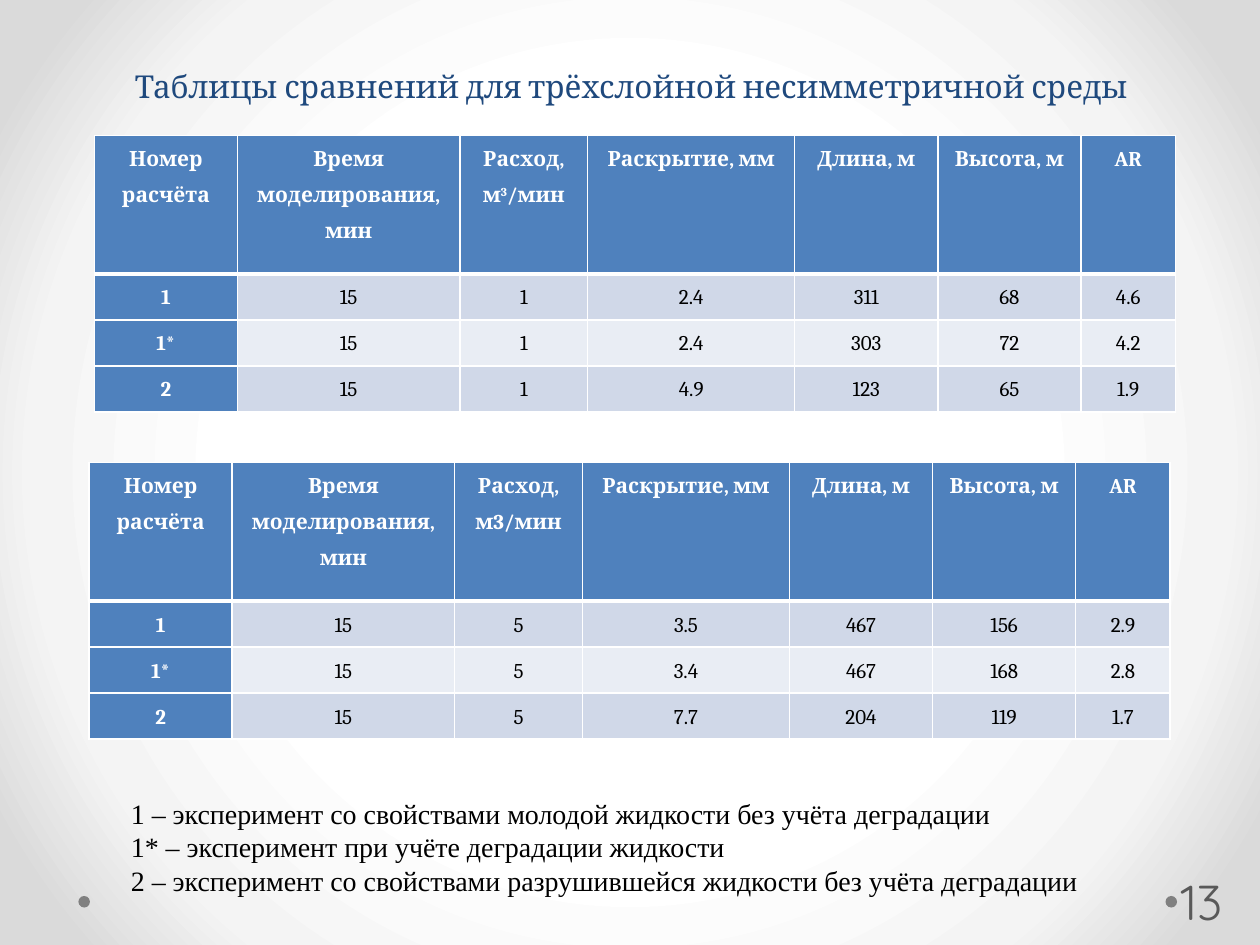
from dataclasses import dataclass

from lxml import etree
from pptx import Presentation
from pptx.dml.color import RGBColor
from pptx.enum import shapes, text
from pptx.oxml import ns, parse_xml
from pptx.util import Pt


@dataclass(frozen=True)
class Theme:
    title: str = "1F497D"
    accent: str = "4F81BD"
    bands: tuple = ("D0D8E8", "E9EDF4")
    white: str = "FFFFFF"
    black: str = "000000"
    dot: str = "808080"
    number: str = "595959"
    glow: tuple = ((50, "FFFFFF"), (76, "F4F4F4"), (92, "DADADA"))
    serif: str = "Cambria"
    note_font: str = "Times New Roman"
    number_font: str = "Quicksand"
    title_size: int = 18
    table_size: int = 12
    note_size: int = 16
    number_size: int = 28


T = Theme()
COLUMNS = (81.7, 127.1, 73.1, 118.3, 81.8, 81.8, 54)
HEADER_HEIGHT, ROW_HEIGHT = 79.2, 26.3

# A cell is a list of (text, is superscript) pairs, or a plain string.
FLOW_SUPERSCRIPT = [("Расход, м", False), ("3", True), ("/мин", False)]
FLOW_PLAIN = "Расход, м3/мин"
LOW_FLOW = [
    ("1", "15", "1", "2.4", "311", "68", "4.6"),
    ("1*", "15", "1", "2.4", "303", "72", "4.2"),
    ("2", "15", "1", "4.9", "123", "65", "1.9"),
]
HIGH_FLOW = [
    ("1", "15", "5", "3.5", "467", "156", "2.9"),
    ("1*", "15", "5", "3.4", "467", "168", "2.8"),
    ("2", "15", "5", "7.7", "204", "119", "1.7"),
]
NOTES = (
    "1 – эксперимент со свойствами молодой жидкости без учёта деградации",
    "1* – эксперимент при учёте деградации жидкости",
    "2 – эксперимент со свойствами разрушившейся жидкости без учёта деградации",
)


def header(flow):
    return ("Номер расчёта", "Время моделирования, мин", flow,
            "Раскрытие, мм", "Длина, м", "Высота, м", "AR")


def add_run(p, content, font, size, color, bold=False):
    r = p.add_run()
    r.text = content
    r.font.name = font
    r.font.size = Pt(size)
    r.font.bold = bold
    r.font.color.rgb = RGBColor.from_string(color)
    return r


def set_background(s):
    """Fill the slide with a radial gradient around its centre."""
    stops = "".join(
        f'<a:gs pos="{pos * 1000}"><a:srgbClr val="{color}"/></a:gs>'
        for pos, color in T.glow)
    bg = parse_xml(
        f'<p:bg {ns.nsdecls("p", "a")}><p:bgPr><a:gradFill rotWithShape="1">'
        f'<a:gsLst>{stops}</a:gsLst><a:path path="circle">'
        '<a:fillToRect l="50000" t="50000" r="50000" b="50000"/></a:path>'
        '</a:gradFill><a:effectLst/></p:bgPr></p:bg>')
    s.element.cSld.insert(0, bg)


def add_title(s, content):
    sp = s.shapes.title
    sp.left, sp.top, sp.width, sp.height = Pt(36.7), Pt(-13.7), Pt(648), Pt(77)
    tf = sp.text_frame
    tf.auto_size = text.MSO_AUTO_SIZE.NONE
    tf.vertical_anchor = text.MSO_ANCHOR.BOTTOM
    p = tf.paragraphs[0]
    p.alignment = text.PP_ALIGN.CENTER
    p.line_spacing = Pt(58)
    add_run(p, content, T.serif, T.title_size, T.title)


def add_dot(s, left):
    sp = s.shapes.add_shape(shapes.MSO_SHAPE.OVAL, Pt(left), Pt(512),
                            Pt(6.6), Pt(6.6))
    sp.shadow.inherit = False
    sp.fill.solid()
    sp.fill.fore_color.rgb = RGBColor.from_string(T.dot)
    sp.line.fill.background()


def set_borders(cell, top, bottom):
    """Draw white cell borders, 1 pt at the sides."""
    tc_pr = cell._tc.get_or_add_tcPr()
    widths = {"lnL": 1, "lnR": 1, "lnT": top, "lnB": bottom}
    for i, (side, width) in enumerate(widths.items()):
        ln = etree.Element(ns.qn(f"a:{side}"), w=str(Pt(width)))
        fill = etree.SubElement(ln, ns.qn("a:solidFill"))
        etree.SubElement(fill, ns.qn("a:srgbClr"), val=T.white)
        tc_pr.insert(i, ln)


def fill_cell(cell, content, row, column):
    is_head = row == 0 or column == 0
    cell.margin_left = cell.margin_right = Pt(5)
    cell.margin_top = cell.margin_bottom = Pt(0)
    cell.fill.solid()
    cell.fill.fore_color.rgb = RGBColor.from_string(
        T.accent if is_head else T.bands[(row - 1) % 2])
    set_borders(cell, top=3 if row == 1 else 1, bottom=3 if row == 0 else 1)
    p = cell.text_frame.paragraphs[0]
    p.alignment = text.PP_ALIGN.CENTER
    p.line_spacing = 1.5
    parts = [(content, False)] if isinstance(content, str) else content
    for part, superscript in parts:
        r = add_run(p, part, T.serif, T.table_size,
                    T.white if is_head else T.black, is_head)
        if superscript:
            r._r.get_or_add_rPr().set("baseline", "30000")


def add_comparison(s, left, top, rows):
    heights = [HEADER_HEIGHT] + [ROW_HEIGHT] * (len(rows) - 1)
    table = s.shapes.add_table(len(rows), len(COLUMNS), Pt(left), Pt(top),
                               Pt(sum(COLUMNS)), Pt(sum(heights))).table
    for column, width in zip(table.columns, COLUMNS):
        column.width = Pt(width)
    for i, (height, row) in enumerate(zip(heights, rows)):
        table.rows[i].height = Pt(height)
        for j, content in enumerate(row):
            fill_cell(table.cell(i, j), content, i, j)


def add_textbox(s, left, top, width, height, lines, font, size, color):
    tf = s.shapes.add_textbox(Pt(left), Pt(top), Pt(width), Pt(height)).text_frame
    tf.word_wrap = True
    for i, line in enumerate(lines):
        p = tf.add_paragraph() if i else tf.paragraphs[0]
        add_run(p, line, font, size, color)
    return tf


def main():
    prs = Presentation()
    prs.slide_width, prs.slide_height = Pt(720), Pt(540)
    s = prs.slides.add_slide(prs.slide_layouts[5])
    set_background(s)
    for left in (666, 44.8):
        add_dot(s, left)
    add_title(s, "Таблицы сравнений для трёхслойной несимметричной среды")
    add_comparison(s, 54, 77.3, [header(FLOW_SUPERSCRIPT)] + LOW_FLOW)
    add_comparison(s, 51, 264.3, [header(FLOW_PLAIN)] + HIGH_FLOW)
    tf = add_textbox(s, 672.5, 500.4, 44, 28.8, ["13"],
                     T.number_font, T.number_size, T.number)
    tf.vertical_anchor = text.MSO_ANCHOR.MIDDLE
    tf.margin_left = Pt(2.2)
    tf.margin_right = Pt(3.6)
    add_textbox(s, 67.7, 451.4, 589.7, 87, NOTES,
                T.note_font, T.note_size, T.black)
    prs.save("out.pptx")


if __name__ == "__main__":
    main()
